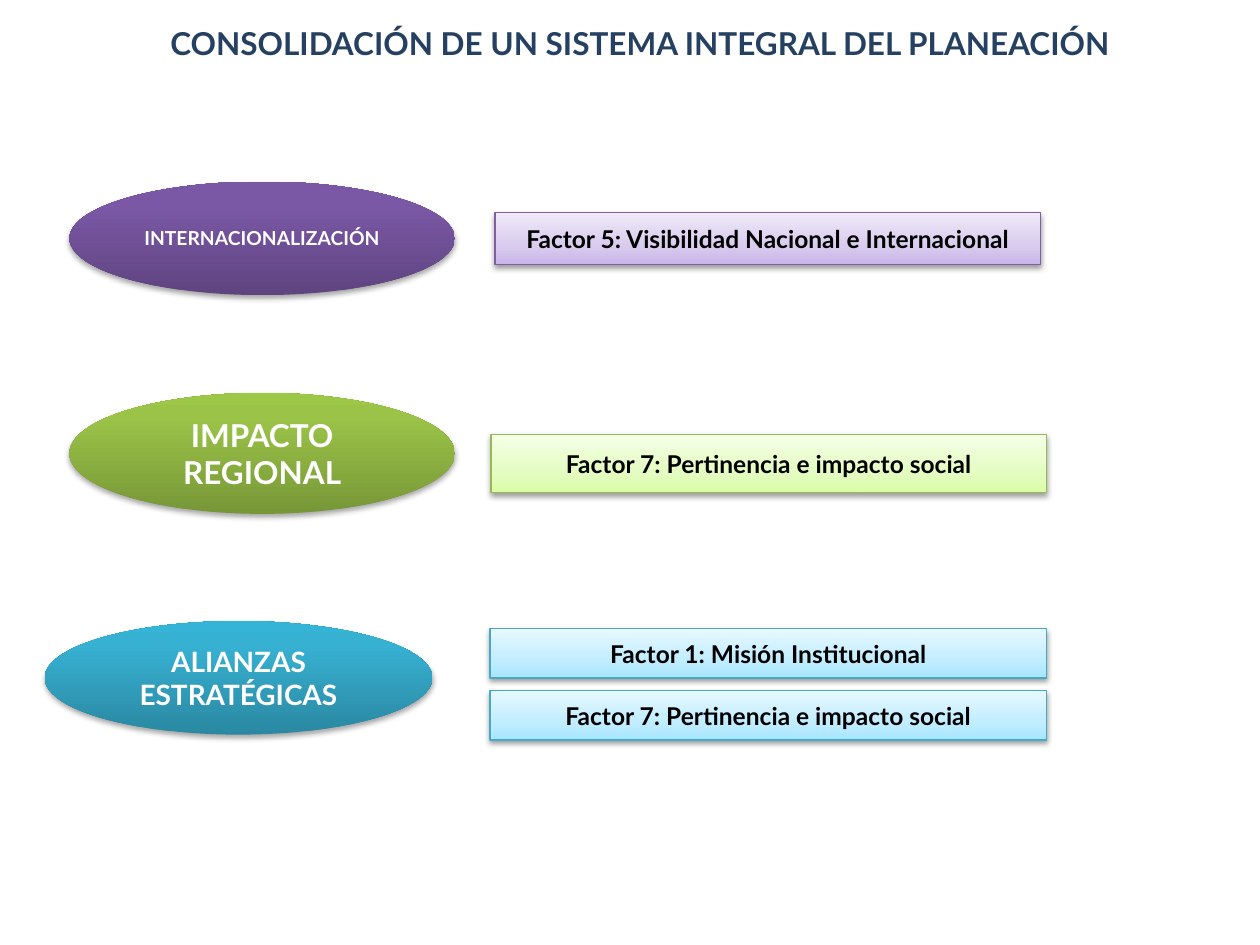
from dataclasses import dataclass

from pptx import Presentation
from pptx.dml.color import RGBColor as RGB
from pptx.enum.shapes import MSO_SHAPE as Shape
from pptx.enum.text import MSO_ANCHOR as Anchor, PP_ALIGN as Align
from pptx.oxml import parse_xml
from pptx.oxml.ns import nsdecls, qn
from pptx.util import Cm, Pt


@dataclass(frozen=True)
class Hue:
    """Gradient stops and border of one strategic line."""
    oval: tuple
    box: tuple
    line: str


@dataclass(frozen=True)
class Theme:
    """Colours and type sizes of the slide."""
    font: str = "Lato"
    title: str = "254061"
    light: str = "FFFFFF"
    dark: str = "000000"
    title_size: int = 18
    box_size: int = 14
    small: int = 11
    medium: int = 16
    large: int = 18
    purple: Hue = Hue(("5F4480", "7B58A6", "7C57A8"), ("C9B5E8", "D8CBEE", "F0EAF9"), "7D60A0")
    green: Hue = Hue(("779737", "9BC348", "9DC746"), ("DAFDA7", "E4FCC2", "F5FFE7"), "98B955")
    blue: Hue = Hue(("2A88A2", "37B1D2", "34B4D6"), ("A7E6FF", "C1EDFF", "E7F8FF"), "46AAC5")


class Deck:
    """Holds the theme and the current slide and draws its elements."""

    def __init__(self, theme):
        """Start a presentation with one title-only slide."""
        self.theme = theme
        self.prs = Presentation()
        self.prs.slide_width, self.prs.slide_height = Cm(25.4), Cm(19.05)
        self.slide = self.prs.slides.add_slide(self.prs.slide_layouts[5])

    def place(self, s, at):
        """Move and size a shape, in centimetres."""
        for name, value in zip(("left", "top", "width", "height"), at):
            setattr(s, name, Cm(value))

    def label(self, s, text, size, color):
        """Set bold centred text in a shape."""
        tf = s.text_frame
        for name, value in {"word_wrap": True, "vertical_anchor": Anchor.MIDDLE}.items():
            setattr(tf, name, value)
        p = tf.paragraphs[0]
        p.alignment = Align.CENTER
        r = p.add_run()
        r.text = text
        for name, value in {"name": self.theme.font, "size": Pt(size), "bold": True}.items():
            setattr(r.font, name, value)
        r.font.color.rgb = RGB.from_string(color)

    def title(self, text, at):
        """Fill the title placeholder."""
        s = self.slide.shapes.title
        self.place(s, at)
        self.label(s, text, self.theme.title_size, self.theme.title)

    def panel(self, kind, at, colors, middle, line, opacity, distance):
        """Add a shape with an upward gradient and a soft shadow."""
        s = self.slide.shapes.add_shape(kind, *map(Cm, at))
        if line:
            s.line.color.rgb = RGB.from_string(line)
            s.line.width = Pt(0.75)
        else:
            s.line.fill.background()
        s.shadow.inherit = False
        stops = "".join(
            f'<a:gs pos="{pos * 1000}"><a:srgbClr val="{color}"/></a:gs>'
            for pos, color in zip((0, middle, 100), colors))
        sp = s.element.spPr
        sp.find(qn("a:ln")).addprevious(parse_xml(
            f'<a:gradFill {nsdecls("a")} rotWithShape="1"><a:gsLst>{stops}</a:gsLst>'
            '<a:lin ang="16200000" scaled="0"/></a:gradFill>'))
        sp.find(qn("a:effectLst")).append(parse_xml(
            f'<a:outerShdw {nsdecls("a")} blurRad="{Pt(3.15)}" dist="{Pt(distance)}" '
            f'dir="5400000" rotWithShape="0"><a:srgbClr val="{self.theme.dark}">'
            f'<a:alpha val="{opacity * 1000}"/></a:srgbClr></a:outerShdw>'))
        return s

    def oval(self, text, at, hue, size):
        """Add the ellipse of a strategic line."""
        s = self.panel(Shape.OVAL, at, hue.oval, 80, None, 35, 1.8)
        self.label(s, text, size, self.theme.light)

    def factor(self, text, at, hue):
        """Add the box of a related factor."""
        s = self.panel(Shape.RECTANGLE, at, hue.box, 35, hue.line, 38, 1.6)
        self.label(s, text, self.theme.box_size, self.theme.dark)


def main():
    """Build the slide."""
    t = Theme()
    deck = Deck(t)
    deck.title("CONSOLIDACIÓN DE UN SISTEMA INTEGRAL DEL PLANEACIÓN", (1.47, 0, 22.86, 1.73))
    relevance = "Factor 7: Pertinencia e impacto social"
    lines = (
        ("INTERNACIONALIZACIÓN", (1.4, 3.66, 7.77, 2.29), t.purple, t.small,
         [("Factor 5: Visibilidad Nacional e Internacional", (9.98, 4.29, 11, 1.04))]),
        ("IMPACTO REGIONAL", (1.4, 7.92, 7.77, 2.44), t.green, t.large,
         [(relevance, (9.9, 8.76, 11.2, 1.17))]),
        ("ALIANZAS ESTRATÉGICAS", (0.9, 12.52, 7.82, 2.29), t.blue, t.medium,
         [("Factor 1: Misión Institucional", (9.88, 12.67, 11.22, 1)),
          (relevance, (9.88, 13.92, 11.22, 1))]),
    )
    for name, at, hue, size, factors in lines:
        deck.oval(name, at, hue, size)
        for text, box in factors:
            deck.factor(text, box, hue)
    deck.prs.save("out.pptx")


if __name__ == "__main__":
    main()
